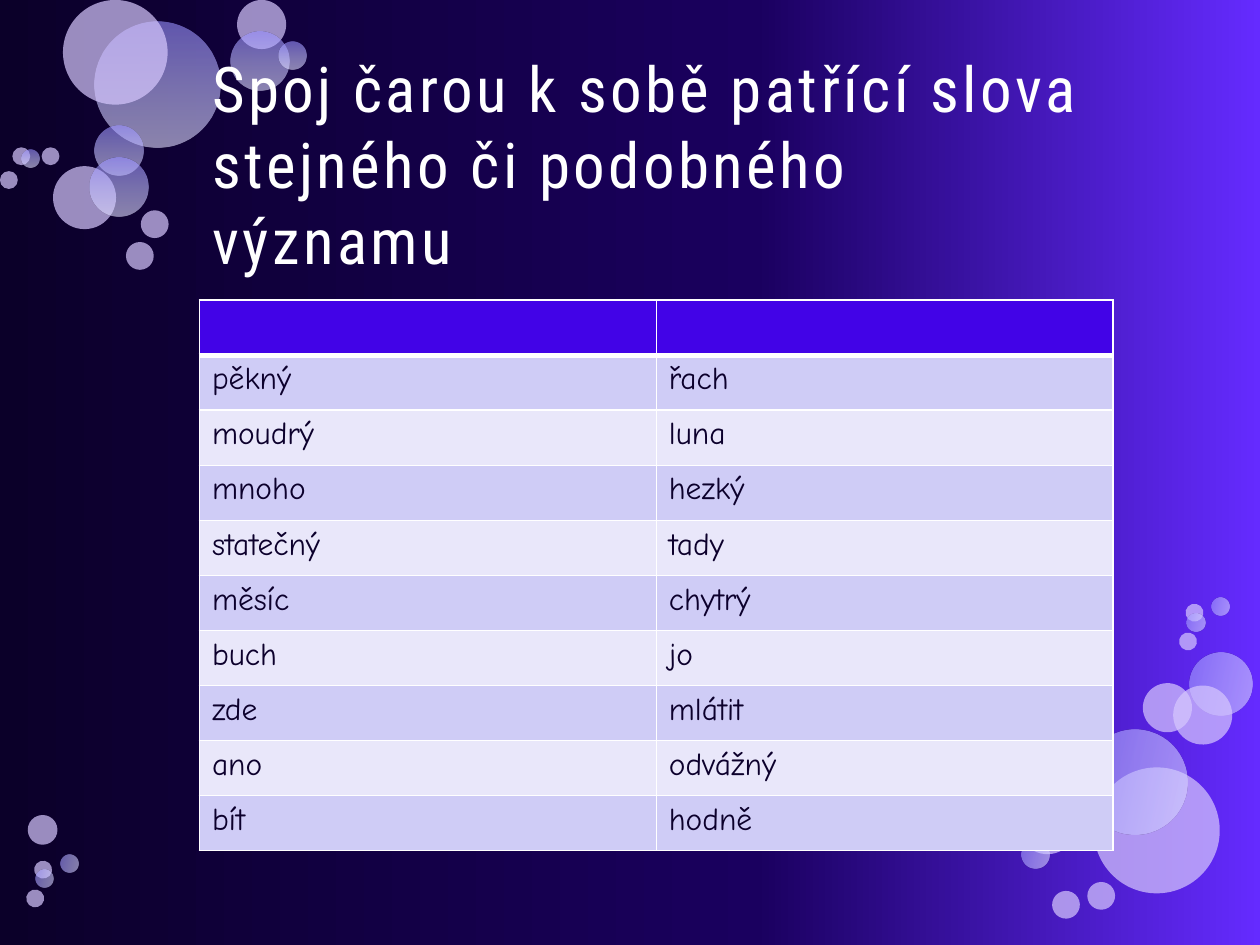
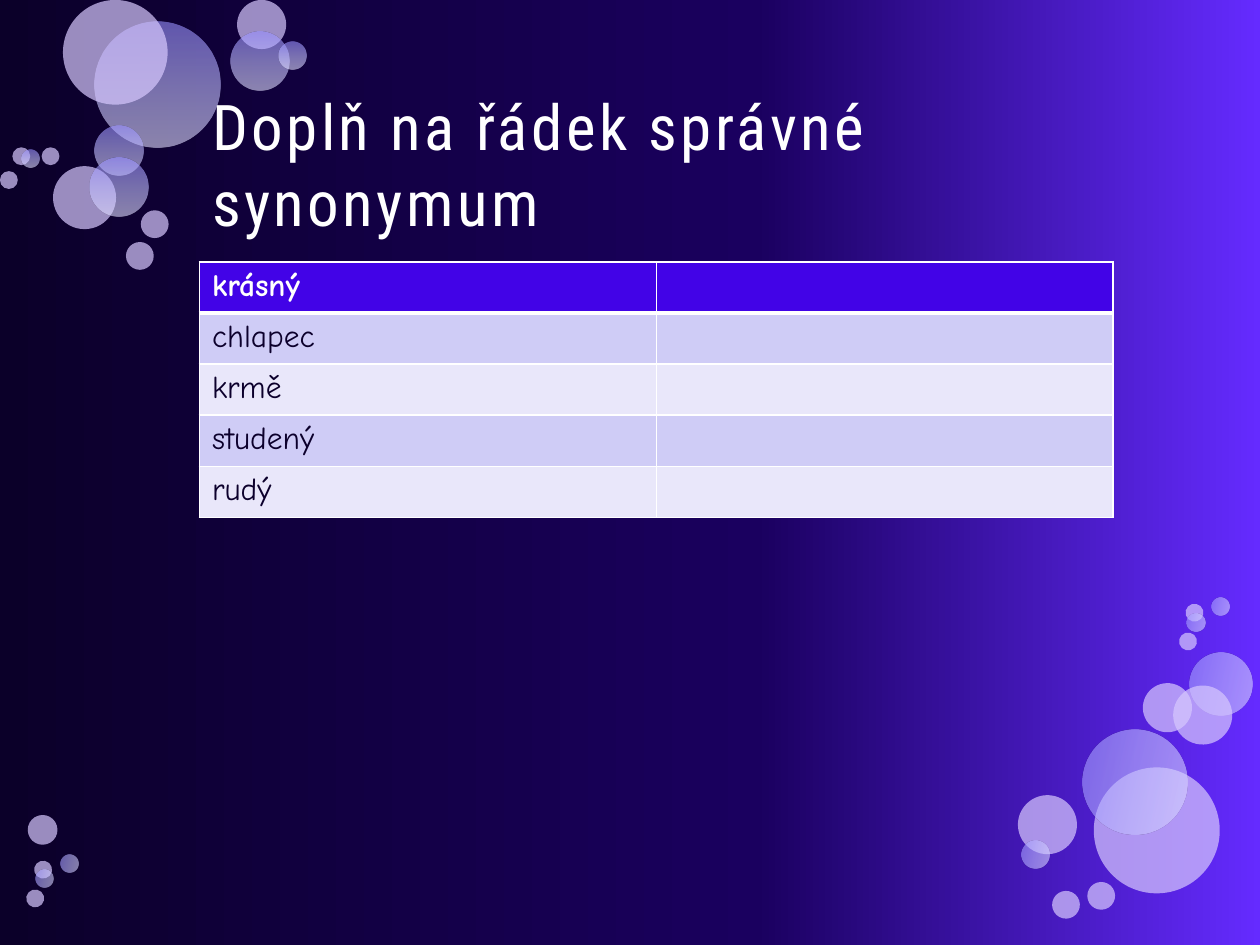
from lxml import etree
from pptx import Presentation
from pptx import util as u
from pptx.dml.color import RGBColor
from pptx.enum import shapes, text
from pptx.oxml.ns import qn

TITLE_FONT, TABLE_FONT = "Roboto Condensed", "Comic Neue"
WHITE, INK, LILAC = "FFFFFF", "0C002C", "D7C8FE"
HEADER, BANDS = "4203E7", ("CFCCF6", "E9E7FA")

# Gradient stops: position %, colour, opacity %
NIGHT = [(0, "0B0029", 100), (60, "1A005F", 100), (100, "652BFF", 100)]
GLASS = [(0, "9890FF", 60), (50, "BFBBFF", 60), (100, "E0DEFF", 60)]

LEFT, WIDTH = u.Cm(4.02), u.Cm(18.42)

# Bubbles from back to front: left, top, diameter in cm, glassy or plain
UPPER_BUBBLES = [
    (1.91, 0.43, 2.54, True), (1.07, 3.35, 1.27, False),
    (1.91, 2.54, 0.99, True), (1.8, 3.18, 1.19, True),
    (1.27, 0, 2.11, False), (4.78, 0, 0.99, False),
    (4.65, 0.64, 1.19, True), (5.61, 0.84, 0.56, True),
    (2.84, 4.24, 0.56, False), (0.25, 2.97, 0.36, False),
    (2.54, 4.88, 0.56, False), (0, 3.45, 0.36, False),
    (0.43, 3.02, 0.36, True), (0.84, 2.97, 0.36, False),
]
LOWER_BUBBLES = [
    (22.05, 15.47, 2.54, False), (23.98, 13.16, 1.27, True),
    (23.04, 13.77, 0.99, False), (23.65, 13.82, 1.19, False),
    (21.82, 14.71, 2.11, True), (0.56, 16.43, 0.6, False),
    (20.52, 16.03, 1.19, False), (20.6, 16.94, 0.56, True),
    (21.21, 17.96, 0.56, False), (23.9, 12.17, 0.36, False),
    (21.92, 17.78, 0.56, False), (24.43, 12.04, 0.36, True),
    (23.93, 12.37, 0.36, True), (23.77, 12.75, 0.36, False),
    (0.69, 17.35, 0.36, False), (1.22, 17.22, 0.36, True),
    (0.71, 17.53, 0.36, True), (0.53, 17.93, 0.36, False),
]

WORD_PAIRS = [
    ("", ""), ("pěkný", "řach"), ("moudrý", "luna"), ("mnoho", "hezký"),
    ("statečný", "tady"), ("měsíc", "chytrý"), ("buch", "jo"),
    ("zde", "mlátit"), ("ano", "odvážný"), ("bít", "hodně"),
]
WORDS_TO_FILL = [(word, "") for word in
                 ("krásný", "chlapec", "krmě", "studený", "rudý")]


def rgb(hex_colour):
    return RGBColor.from_string(hex_colour)


def sub(parent, tag, **attributes):
    return etree.SubElement(parent, qn(tag), attributes)


def set_opacity(colour, percent):
    sub(colour, "a:alpha", val=str(percent * 1000))


def set_gradient(owner, fill, stops, angle):
    fill.gradient()
    gradient = owner.element.find(".//" + qn("a:gradFill"))
    stop_list = gradient.find(qn("a:gsLst"))
    for stop in list(stop_list):
        stop_list.remove(stop)
    for position, hex_colour, opacity in stops:
        stop = sub(stop_list, "a:gs", pos=str(position * 1000))
        set_opacity(sub(stop, "a:srgbClr", val=hex_colour), opacity)
    gradient.find(qn("a:lin")).set("ang", str(angle * 60000))


def add_bubble(slide, left, top, diameter, glassy, tilted):
    bubble = slide.shapes.add_shape(
        shapes.MSO_SHAPE.OVAL, u.Cm(left), u.Cm(top), u.Cm(diameter), u.Cm(diameter))
    bubble.shadow.inherit = False
    bubble.line.fill.background()
    if glassy:
        set_gradient(bubble, bubble.fill, GLASS, 90)
    else:
        bubble.fill.solid()
        bubble.fill.fore_color.rgb = rgb(LILAC)
        set_opacity(bubble.element.spPr.find(".//" + qn("a:srgbClr")), 70)
    if tilted:
        bubble.rotation = 103.3
        bubble.element.spPr.find(qn("a:xfrm")).set("flipV", "1")
    return bubble


def decorate_layout(layout, slide):
    """Give the layout its background and bubbles, shaped on a slide first."""
    set_gradient(layout, layout.background.fill, NIGHT, 0)
    bubbles = [add_bubble(slide, *bubble, tilted)
               for group, tilted in ((UPPER_BUBBLES, False), (LOWER_BUBBLES, True))
               for bubble in group]
    for number, bubble in enumerate(bubbles):
        bubble.element.nvSpPr.cNvPr.set("id", str(100 + number))
        layout.shapes.element.insert(2 + number, bubble.element)


def add_run(paragraph, words, font, size, colour, bold=False):
    run = paragraph.add_run()
    run.text = words
    run.font.name, run.font.size, run.font.bold = font, u.Pt(size), bold
    run.font.color.rgb = rgb(colour)
    return run


def set_title(slide, words):
    title = slide.shapes.title
    title.left, title.top, title.width, title.height = LEFT, u.Cm(1.7), WIDTH, u.Cm(3.18)
    frame = title.text_frame
    frame.word_wrap = True
    frame.auto_size = text.MSO_AUTO_SIZE.NONE
    frame.vertical_anchor = text.MSO_ANCHOR.MIDDLE
    frame.paragraphs[0].alignment = text.PP_ALIGN.LEFT
    run = add_run(frame.paragraphs[0], words, TITLE_FONT, 36, WHITE)
    run.font._element.set("spc", "200")


def set_borders(cell, row):
    properties = cell._tc.get_or_add_tcPr()
    widths = {"L": 1, "R": 1, "T": 3 if row == 1 else 1, "B": 3 if row == 0 else 1}
    for side, points in widths.items():
        line = sub(properties, "a:ln" + side, w=str(u.Pt(points)))
        sub(sub(line, "a:solidFill"), "a:srgbClr", val=WHITE)


def add_word_table(slide, top, row_height, rows):
    table = slide.shapes.add_table(
        len(rows), 2, LEFT, u.Cm(top), WIDTH, u.Cm(row_height * len(rows))).table
    for row, words in enumerate(rows):
        table.rows[row].height = u.Cm(row_height)
        for column, word in enumerate(words):
            cell = table.cell(row, column)
            set_borders(cell, row)
            cell.fill.solid()
            cell.fill.fore_color.rgb = rgb(BANDS[(row - 1) % 2] if row else HEADER)
            paragraph = cell.text_frame.paragraphs[0]
            if word:
                add_run(paragraph, word, TABLE_FONT, 18,
                        INK if row else WHITE, bold=row == 0)


def main():
    deck = Presentation()
    deck.slide_width, deck.slide_height = u.Cm(25.4), u.Cm(19.05)
    title_only = deck.slide_layouts[5]

    # Matching synonyms
    matching = deck.slides.add_slide(title_only)
    decorate_layout(title_only, matching)
    set_title(matching, "Spoj čarou k sobě patřící slova stejného či podobného významu")
    add_word_table(matching, 6.05, 1.11, WORD_PAIRS)

    # Filling in synonyms
    filling = deck.slides.add_slide(title_only)
    set_title(filling, "Doplň na řádek správné synonymum")
    add_word_table(filling, 5.28, 1.03, WORDS_TO_FILL)

    deck.save("out.pptx")


if __name__ == "__main__":
    main()
